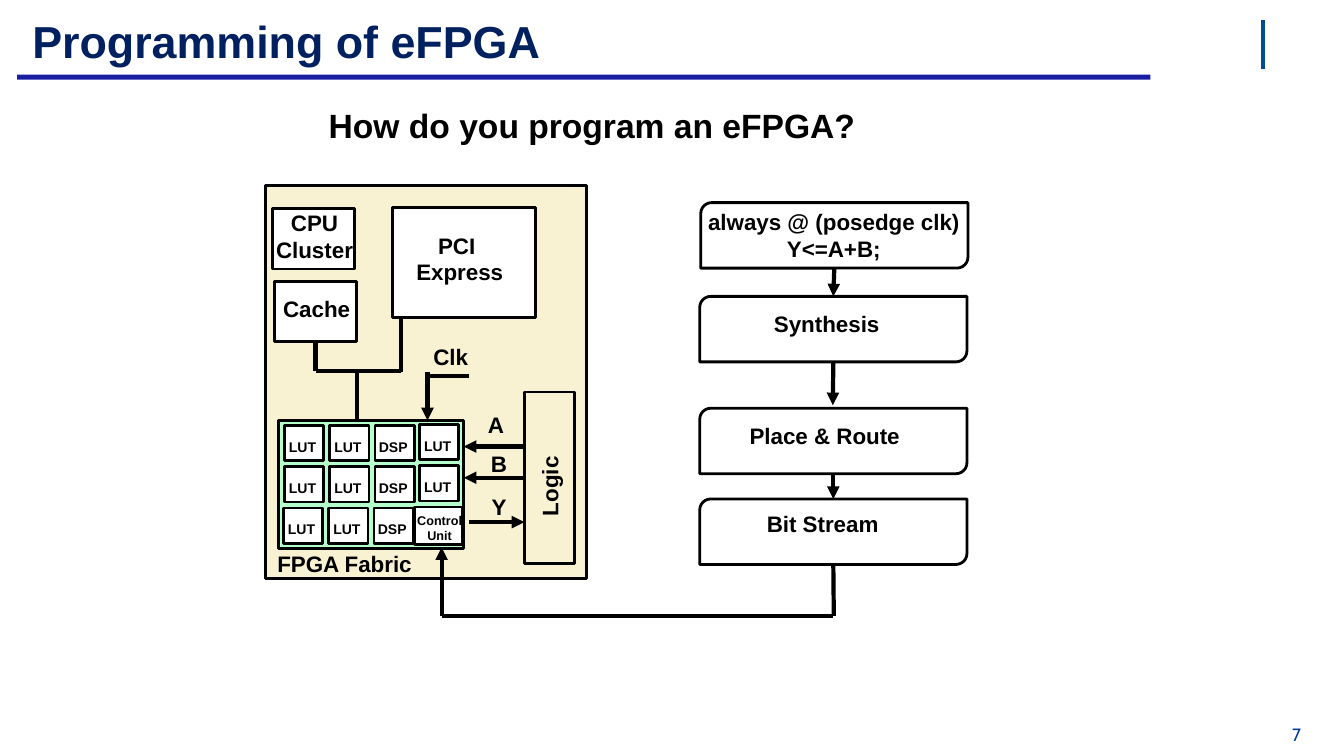
"""Build a slide showing how an embedded FPGA is programmed."""
import dataclasses
import typing

import lxml.etree
import pptx
import pptx.dml.color
import pptx.enum.shapes
import pptx.enum.text
import pptx.oxml.ns
import pptx.util

RGBColor = pptx.dml.color.RGBColor
BLACK = RGBColor(0x00, 0x00, 0x00)
WHITE = RGBColor(0xFF, 0xFF, 0xFF)
CREAM = RGBColor(0xF8, 0xF2, 0xD3)
MINT = RGBColor(0xB4, 0xFF, 0xCC)
NAVY = RGBColor(0x00, 0x20, 0x60)
RULE_BLUE = RGBColor(0x19, 0x1E, 0xA2)
ACCENT_BLUE = RGBColor(0x02, 0x4C, 0x90)
NUMBER_BLUE = RGBColor(0x00, 0x38, 0x93)

EMU_PER_PX = 9144
TOP, LEFT, BOTTOM = 0, 1, 2
RECTANGLE = pptx.enum.shapes.MSO_SHAPE.RECTANGLE
ROUNDED = pptx.enum.shapes.MSO_SHAPE.ROUND_2_DIAG_RECTANGLE
ALIGN_LEFT = pptx.enum.text.PP_ALIGN.LEFT
ALIGN_CENTER = pptx.enum.text.PP_ALIGN.CENTER
ANCHOR_TOP = pptx.enum.text.MSO_ANCHOR.TOP
ANCHOR_MIDDLE = pptx.enum.text.MSO_ANCHOR.MIDDLE

Area = tuple[int, int, int, int]
Point = tuple[int, int]
Joint = typing.Optional[tuple[str, int]]


@dataclasses.dataclass
class Box:
    key: str
    area: Area
    fill: typing.Optional[RGBColor] = WHITE
    geometry: typing.Any = RECTANGLE
    line: typing.Optional[RGBColor] = BLACK


@dataclasses.dataclass
class Label:
    text: str
    area: Area
    size: float = 16
    align: typing.Any = ALIGN_CENTER
    anchor: typing.Any = ANCHOR_MIDDLE
    inset: int = 6
    color: RGBColor = BLACK
    font: str = "Arial"
    bold: bool = True
    wrap: bool = True
    rotation: int = 0


@dataclasses.dataclass
class Wire:
    start: Point
    end: Point
    arrow: bool = False
    source: Joint = None
    target: Joint = None
    color: RGBColor = BLACK


TITLE = Label("Programming of eFPGA", (18, 1, 1117, 78), 32, ALIGN_LEFT, inset=14, color=NAVY)
QUESTION = Label("How do you program an eFPGA?", (302, 104, 834, 80), 24, ALIGN_LEFT, ANCHOR_TOP, 0)

BLOCK_ROWS = [["LUT", "LUT", "DSP", "LUT"], ["LUT", "LUT", "DSP", "LUT"], ["LUT", "LUT", "DSP"]]
BLOCKS = [(kind, 282 + 45 * column - max(row - 1, column // 3), 422 + 41 * row - column // 3)
          for row, kinds in enumerate(BLOCK_ROWS) for column, kind in enumerate(kinds)]

BOXES = [
    Box("Title rule", (17, 74, 1124, 5), RULE_BLUE, line=None),
    Box("Chip", (263, 184, 319, 390), CREAM),
    Box("CPU Cluster", (270, 207, 82, 60)),
    Box("PCI Express", (389, 206, 142, 109)),
    Box("Logic", (520, 389, 50, 170), None),
    Box("FPGA Fabric", (276, 417, 184, 127), MINT),
    Box("Cache", (272, 279, 82, 60)),
    Box("Code", (695, 201, 265, 65), None, ROUNDED),
    Box("Synthesis", (694, 294, 265, 65), None, ROUNDED),
    Box("Place & Route", (694, 405, 265, 65), None, ROUNDED),
    Box("Bit Stream", (694, 495, 265, 65), None, ROUNDED),
    Box("Control Unit", (411, 503, 48, 37)),
    *[Box(f"{kind} {x} {y}", (x, y, 39, 35)) for kind, x, y in BLOCKS],
]

WIRES = [
    Wire((1253, 20), (1253, 68), color=ACCENT_BLUE),
    Wire((520, 443), (460, 443), True),
    Wire((520, 474), (460, 474), True, ("Logic", LEFT)),
    Wire((465, 518), (520, 518), True),
    Wire((424, 369), (424, 417), True),
    Wire((422, 373), (465, 373)),
    Wire((313, 339), (313, 368), source=("Cache", BOTTOM)),
    Wire((398, 315), (398, 369)),
    Wire((398, 368), (313, 368)),
    Wire((354, 368), (354, 417)),
    Wire((827, 266), (827, 294), True, ("Code", BOTTOM), ("Synthesis", TOP)),
    Wire((827, 359), (826, 402), True, ("Synthesis", BOTTOM)),
    Wire((827, 470), (826, 495), True, ("Place & Route", BOTTOM), ("Bit Stream", TOP)),
    Wire((826, 560), (827, 611), source=("Bit Stream", BOTTOM)),
    Wire((826, 611), (438, 611)),
    Wire((438, 611), (438, 543), True),
]

LABELS = [
    Label("CPU\nCluster", (263, 202, 98, 65)),
    Label("PCI \nExpress", (392, 224, 128, 65)),
    Label("Logic", (501, 455, 88, 38), align=ALIGN_LEFT, rotation=270),
    Label("FPGA Fabric", (269, 540, 179, 38), align=ALIGN_LEFT),
    Label("Cache", (265, 287, 98, 38)),
    Label("Clk", (398, 335, 98, 38)),
    Label("A", (443, 402, 98, 38)),
    Label("B", (446, 441, 98, 38)),
    Label("Y", (446, 484, 98, 38)),
    Label("always @ (posedge clk)\nY<=A+B;", (686, 201, 282, 65)),
    Label("Synthesis", (718, 301, 204, 39)),
    Label("Place & Route", (716, 413, 204, 39)),
    Label("Bit Stream", (714, 500, 204, 39)),
    Label("Control Unit", (407, 503, 58, 42), 9),
    *[Label(kind, (x - 3, y + 7, 42, 28), 10) for kind, x, y in BLOCKS],
    Label("7", (1275, 718, 22, 21), 12.7, inset=0, color=NUMBER_BLUE,
          font="Cabin", bold=False, wrap=False, anchor=ANCHOR_TOP),
]


def px(length: int) -> pptx.util.Emu:
    return pptx.util.Emu(length * EMU_PER_PX)


def apply(target: typing.Any, values: dict[str, typing.Any]) -> None:
    for name, value in values.items():
        setattr(target, name, value)


def write_label(shape: typing.Any, label: Label) -> None:
    apply(shape, dict(zip(("left", "top", "width", "height"), map(px, label.area))))
    if label.rotation:
        shape.rotation = label.rotation
    frame = shape.text_frame
    margins = ("margin_left", "margin_top", "margin_right", "margin_bottom")
    apply(frame, {
        "text": label.text,
        "word_wrap": label.wrap,
        "auto_size": pptx.enum.text.MSO_AUTO_SIZE.NONE,
        "vertical_anchor": label.anchor,
        **dict.fromkeys(margins, px(label.inset)),
    })
    for paragraph in frame.paragraphs:
        apply(paragraph, {"alignment": label.align, "space_before": pptx.util.Pt(0)})
        for run in paragraph.runs:
            apply(run.font, {"name": label.font, "size": pptx.util.Pt(label.size), "bold": label.bold})
            run.font.color.rgb = label.color


def draw_box(slide: typing.Any, box: Box) -> typing.Any:
    shape = slide.shapes.add_shape(box.geometry, *map(px, box.area))
    shape.shadow.inherit = False
    for paint, color in ((shape.fill, box.fill), (shape.line.fill, box.line)):
        if color is None:
            paint.background()
        else:
            paint.solid()
            paint.fore_color.rgb = color
    if box.line is not None:
        shape.line.width = pptx.util.Pt(2)
    return shape


def draw_wire(slide: typing.Any, wire: Wire, shapes: dict[str, typing.Any]) -> None:
    connector = slide.shapes.add_connector(
        pptx.enum.shapes.MSO_CONNECTOR.STRAIGHT, *map(px, wire.start + wire.end))
    for joint, connect in ((wire.source, connector.begin_connect), (wire.target, connector.end_connect)):
        if joint:
            connect(shapes[joint[0]], joint[1])
    connector.line.width = pptx.util.Pt(3)
    connector.line.color.rgb = wire.color
    properties = connector._element.spPr
    if wire.arrow:
        line = properties.find(pptx.oxml.ns.qn("a:ln"))
        lxml.etree.SubElement(line, pptx.oxml.ns.qn("a:tailEnd"), type="triangle")
    lxml.etree.SubElement(properties, pptx.oxml.ns.qn("a:effectLst"))


def main() -> None:
    presentation = pptx.Presentation()
    apply(presentation, {"slide_width": px(1333), "slide_height": px(750)})
    slide = presentation.slides.add_slide(presentation.slide_layouts[1])
    write_label(slide.shapes.title, TITLE)
    body = slide.placeholders[1]
    write_label(body, QUESTION)
    properties = body.text_frame.paragraphs[0]._p.get_or_add_pPr()
    properties.attrib.update({"marL": str(px(24)), "indent": "0"})
    lxml.etree.SubElement(properties, pptx.oxml.ns.qn("a:buNone"))
    shapes = {box.key: draw_box(slide, box) for box in BOXES}
    for wire in WIRES:
        draw_wire(slide, wire, shapes)
    for label in LABELS:
        write_label(slide.shapes.add_textbox(0, 0, 0, 0), label)
    presentation.save("out.pptx")


if __name__ == "__main__":
    main()
